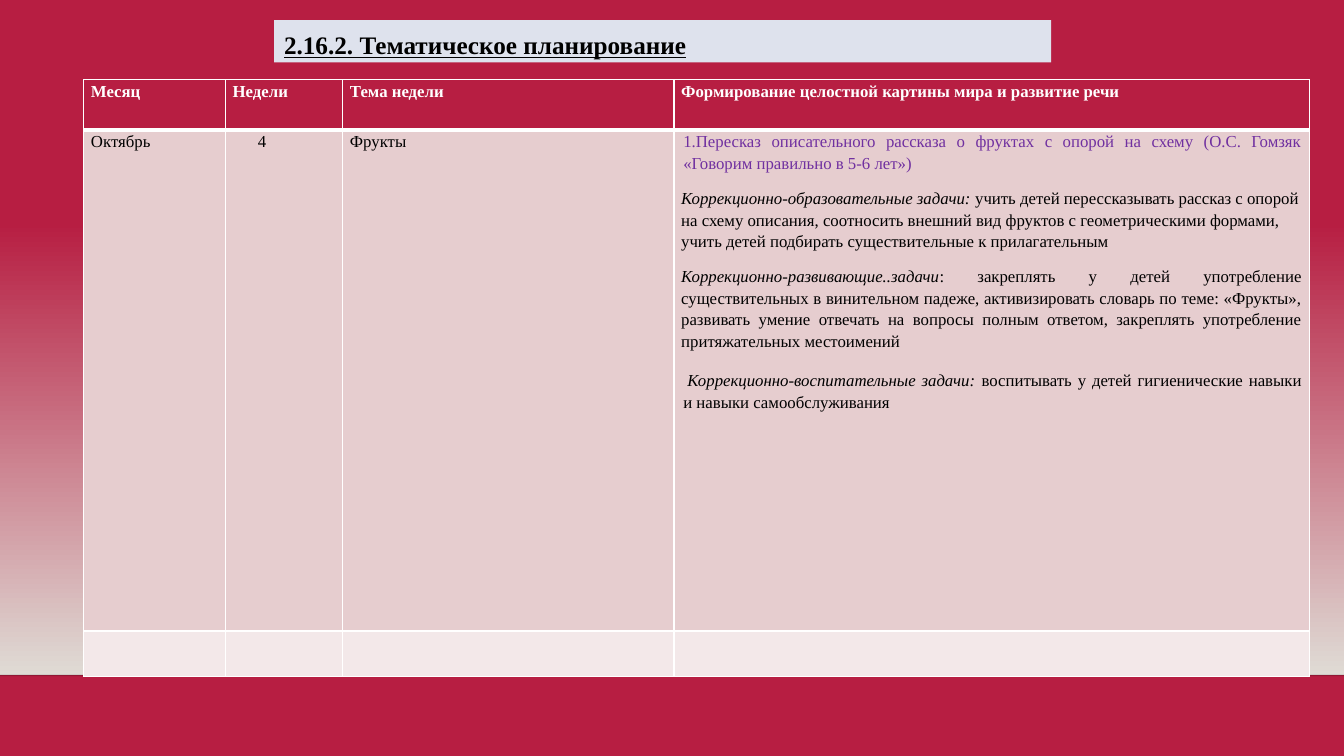
import pptx
import pptx.util
import pptx.dml.color
import pptx.enum.dml
import pptx.enum.shapes
import pptx.enum.text
import pptx.oxml
import pptx.oxml.ns

Pt = pptx.util.Pt
Align = pptx.enum.text.PP_ALIGN

# Content: a paragraph is (runs, options), a run is (text, style)
TITLE = "2.16.2. Тематическое планирование"
HEADINGS = [
    ([("Месяц", "head")], {}),
    ([("Недели", "head")], {}),
    ([("Тема недели", "head")], {}),
    ([("Формирование целостной картины мира и развитие речи", "head")], {"align": Align.LEFT}),
]
TASKS = [
    ([("1.Пересказ описательного рассказа о фруктах с опорой на схему (О.С. Гомзяк "
       "«Говорим правильно в 5-6 лет»)", "topic")], {"indent": 1.5}),
    ([("Коррекционно-образовательные задачи:", "task"),
      (" учить детей перессказывать рассказ с опорой на схему описания, соотносить "
       "внешний вид фруктов с геометрическими формами, учить детей подбирать "
       "существительные к прилагательным", "body")], {"align": Align.LEFT}),
    ([("Коррекционно-развивающие..задачи", "task"),
      (": закреплять у детей употребление существительных в винительном падеже, "
       "активизировать словарь по теме: «Фрукты», развивать умение отвечать на вопросы "
       "полным ответом, закреплять употребление притяжательных местоимений", "body")],
     {"after": 12.8}),
    ([("Коррекционно-воспитательные задачи:", "task"),
      (" воспитывать у детей гигиенические навыки и навыки самообслуживания", "body")],
     {"indent": 1.5, "first": 3}),
]
ROWS = [
    [[heading] for heading in HEADINGS],
    [[([("Октябрь", "body")], {})],
     [([("4", "body")], {"indent": 18})],
     [([("Фрукты", "body")], {})],
     TASKS],
    [[], [], [], []],
]

# Theme
THEME = {
    "font": "Times New Roman",
    "red": "B71E42", "sand": "DFDBD5", "title_fill": "DEE2ED", "border": "FFFFFF",
    "horizon": "000001",
    "row_fills": ["B71E42", "E6CDCF", "F3E8E9"],
    "styles": {  # size, colour, bold, italic, underline
        "title": (18, "000000", True, False, True),
        "head": (12, "FFFFFF", True, False, False),
        "body": (12, "000000", False, False, False),
        "task": (12, "000000", False, True, False),
        "topic": (12, "7030A0", False, False, False),
    },
}

# Layout
PAGE_WIDTH, PAGE_HEIGHT = 960, 540
FADE_TOP, FADE_BOTTOM = 159.1, 482.4
TITLE_BOX = (195.8, 14.4, 555.1, 30.2)
TABLE_LEFT, TABLE_TOP = 59.8, 56.9
COLUMN_WIDTHS = [101.2, 83.8, 236.6, 453.9]
ROW_HEIGHTS = [36, 357.8, 32.4]


def colour(code):
    return pptx.dml.color.RGBColor.from_string(code)


def write(frame, paragraphs):
    frame.word_wrap = True
    for index, (runs, options) in enumerate(paragraphs):
        para = frame.paragraphs[0] if index == 0 else frame.add_paragraph()
        para.alignment = options.get("align", Align.JUSTIFY)
        para.line_spacing = 1.15
        para.space_after = Pt(options.get("after", 10))
        properties = para._p.get_or_add_pPr()
        properties.set("marL", str(Pt(options.get("indent", 0))))
        properties.set("indent", str(Pt(options.get("first", 0))))
        for text, style in runs:
            size, code, bold, italic, underline = THEME["styles"][style]
            span = para.add_run()
            span.text = text
            span.font.name = THEME["font"]
            span.font.size = Pt(size)
            span.font.bold, span.font.italic, span.font.underline = bold, italic, underline
            span.font.color.rgb = colour(code)


def border(cell, side, width):
    cell._tc.get_or_add_tcPr().append(pptx.oxml.parse_xml(
        f'<a:{side} {pptx.oxml.ns.nsdecls("a")} w="{Pt(width)}"><a:solidFill>'
        f'<a:srgbClr val="{THEME["border"]}"/></a:solidFill></a:{side}>'))


def add_background(page):
    page.background.fill.solid()
    page.background.fill.fore_color.rgb = colour(THEME["red"])

    # Fade from red to sand
    fade = page.shapes.add_shape(
        pptx.enum.shapes.MSO_SHAPE.RECTANGLE,
        0, Pt(FADE_TOP), Pt(PAGE_WIDTH), Pt(FADE_BOTTOM - FADE_TOP))
    fade.shadow.inherit = False
    fade.line.fill.background()
    fade.fill.gradient()
    fade.fill.gradient_angle = 270
    for stop, name, position in zip(fade.fill.gradient_stops, ("red", "sand"), (0, 1)):
        stop.color.rgb = colour(THEME[name])
        stop.position = position

    # Faint line under the fade
    horizon = page.shapes.add_connector(
        pptx.enum.shapes.MSO_CONNECTOR.STRAIGHT,
        0, Pt(FADE_BOTTOM), Pt(PAGE_WIDTH), Pt(FADE_BOTTOM))
    horizon.line.width = Pt(1)
    horizon.line.color.rgb = colour(THEME["horizon"])
    code = horizon.line._ln.find(".//" + pptx.oxml.ns.qn("a:srgbClr"))
    code.append(pptx.oxml.parse_xml(f'<a:alpha {pptx.oxml.ns.nsdecls("a")} val="20000"/>'))
    horizon._element.spPr.append(
        pptx.oxml.parse_xml(f'<a:effectLst {pptx.oxml.ns.nsdecls("a")}/>'))


def add_title(page):
    box = page.shapes.add_textbox(*map(Pt, TITLE_BOX))
    box.fill.solid()
    box.fill.fore_color.rgb = colour(THEME["title_fill"])
    write(box.text_frame, [([(TITLE, "title")], {})])


def add_plan(page):
    table = page.shapes.add_table(
        len(ROWS), len(COLUMN_WIDTHS), Pt(TABLE_LEFT), Pt(TABLE_TOP),
        Pt(sum(COLUMN_WIDTHS)), Pt(sum(ROW_HEIGHTS))).table
    for column, width in zip(table.columns, COLUMN_WIDTHS):
        column.width = Pt(width)
    for row, height in zip(table.rows, ROW_HEIGHTS):
        row.height = Pt(height)
    for row_index, row in enumerate(ROWS):
        for column_index, paragraphs in enumerate(row):
            cell = table.cell(row_index, column_index)
            cell.margin_left = cell.margin_right = Pt(5.2)
            cell.margin_top = cell.margin_bottom = 0
            for side in ("lnL", "lnR", "lnT", "lnB"):
                under_heading = (row_index, side) in ((0, "lnB"), (1, "lnT"))
                border(cell, side, 3 if under_heading else 1)
            cell.fill.solid()
            cell.fill.fore_color.rgb = colour(THEME["row_fills"][row_index])
            write(cell.text_frame, paragraphs)


def main():
    deck = pptx.Presentation()
    deck.slide_width, deck.slide_height = Pt(PAGE_WIDTH), Pt(PAGE_HEIGHT)
    page = deck.slides.add_slide(deck.slide_layouts[6])
    add_background(page)
    add_title(page)
    add_plan(page)
    deck.save("out.pptx")


if __name__ == "__main__":
    main()
